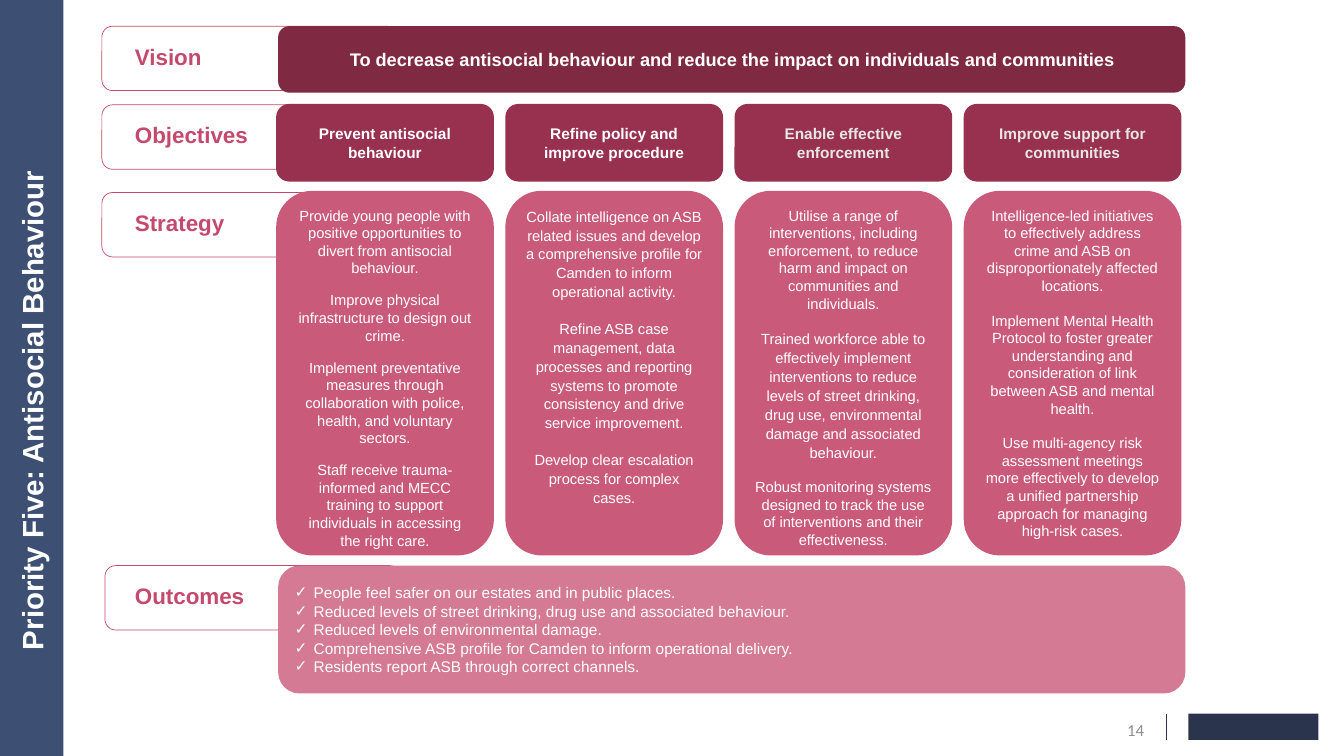
from collections import namedtuple

from lxml.etree import SubElement
from pptx import Presentation
from pptx.dml.color import RGBColor
from pptx.enum.shapes import MSO_CONNECTOR, MSO_SHAPE
from pptx.enum.text import MSO_ANCHOR, MSO_AUTO_SIZE, PP_ALIGN
from pptx.oxml.ns import qn
from pptx.util import Pt

NAVY = RGBColor(0x3D, 0x50, 0x73)
DARK_NAVY = RGBColor(0x2A, 0x35, 0x4D)
WINE = RGBColor(0x7F, 0x29, 0x42)
BERRY = RGBColor(0x98, 0x31, 0x50)
ROSE = RGBColor(0xCA, 0x5A, 0x7A)
PINK = RGBColor(0xD4, 0x7A, 0x94)
LABEL_PINK = RGBColor(0xC4, 0x49, 0x6D)
WHITE = RGBColor(0xFF, 0xFF, 0xFF)
PALE_GREY = RGBColor(0xE7, 0xE6, 0xE6)
NUMBER_GREY = RGBColor(0x91, 0x8C, 0x8A)

Box = namedtuple("Box", "left top width height")
Column = namedtuple("Column", "objective color strategies gap spacings")

COLUMN_PITCH = 163.7
COLUMN_WIDTH = 155.5
CORNER_INSET = 4.5
BULLET_INDENT = 13.7

COLUMNS = [
    Column("Prevent antisocial behaviour", WHITE, [
        "Provide young people with positive opportunities to divert from antisocial behaviour.",
        "Improve physical infrastructure to design out crime.",
        "Implement preventative measures through collaboration with police, health, and voluntary sectors.",
        "Staff receive trauma-informed and MECC training to support individuals in accessing the right care.",
    ], 10.3, [1, 1, 1, 1]),
    Column("Refine policy and improve procedure", WHITE, [
        "Collate intelligence on ASB related issues and develop a comprehensive profile for Camden to inform operational activity.",
        "Refine ASB case management, data processes and reporting systems to promote consistency and drive service improvement.",
        "Develop clear escalation process for complex cases.",
    ], 12.9, [1.07, 1.07, 1.07]),
    Column("Enable effective enforcement", PALE_GREY, [
        "Utilise a range of interventions, including enforcement, to reduce harm and impact on communities and individuals.",
        "Trained workforce able to effectively implement interventions to reduce levels of street drinking, drug use, environmental damage and associated behaviour.",
        "Robust monitoring systems designed to track the use of interventions and their effectiveness.",
    ], 12.1, [1, 1.07, 1]),
    Column("Improve support for communities", PALE_GREY, [
        "Intelligence-led initiatives to effectively address crime and ASB on disproportionately affected locations.",
        "Implement Mental Health Protocol to foster greater understanding and consideration of link between ASB and mental health.",
        "Use multi-agency risk assessment meetings more effectively to develop a unified partnership approach for managing high-risk cases.",
    ], 12.1, [1, 1, 1]),
]

OUTCOMES = [
    "People feel safer on our estates and in public places.",
    "Reduced levels of street drinking, drug use and associated behaviour.",
    "Reduced levels of environmental damage.",
    "Comprehensive ASB profile for Camden to inform operational delivery.",
    "Residents report ASB through correct channels.",
]


def in_points(box):
    """Return the four lengths of a box as Pt values."""
    return [Pt(length) for length in box]


def write_text(shape, texts, size, color, font="Arial", bold=False, align=PP_ALIGN.CENTER,
               anchor=MSO_ANCHOR.MIDDLE, gap=0, spacings=None, bullet=None):
    """Fill a shape with formatted paragraphs."""
    frame = shape.text_frame
    frame.word_wrap = True
    frame.auto_size = MSO_AUTO_SIZE.NONE
    frame.vertical_anchor = anchor
    for index, text in enumerate(texts):
        paragraph = frame.paragraphs[0] if index == 0 else frame.add_paragraph()
        paragraph.alignment = align
        paragraph.line_spacing = float(spacings[index]) if spacings else 1.0
        paragraph.space_before = Pt(gap if index else 0)
        paragraph.space_after = Pt(0)
        run = paragraph.add_run()
        run.text = text
        run.font.name = font
        run.font.size = Pt(size)
        run.font.bold = bold
        run.font.color.rgb = color
        if bullet:
            add_bullet(paragraph, bullet)


def add_bullet(paragraph, character):
    """Give a paragraph a hanging bullet."""
    properties = paragraph._p.get_or_add_pPr()
    properties.set("marL", str(Pt(BULLET_INDENT)))
    properties.set("indent", str(-Pt(BULLET_INDENT)))
    SubElement(properties, qn("a:buFont"), typeface="Arial")
    SubElement(properties, qn("a:buChar"), char=character)


def add_panel(slide, box, fill=None, outline=None, kind=MSO_SHAPE.ROUNDED_RECTANGLE):
    """Add a flat panel with an optional fill and outline."""
    shape = slide.shapes.add_shape(kind, *in_points(box))
    shape.shadow.inherit = False
    if fill is None:
        shape.fill.background()
    else:
        shape.fill.solid()
        shape.fill.fore_color.rgb = fill
    if outline is None:
        shape.line.fill.background()
    else:
        shape.line.color.rgb = outline
        shape.line.width = Pt(0.5)
    return shape


def place_in_front(placeholder, box):
    """Move a placeholder to a box above the shapes drawn so far."""
    placeholder.left, placeholder.top, placeholder.width, placeholder.height = in_points(box)
    placeholder.element.getparent().append(placeholder.element)


def add_sidebar(slide, box):
    """Draw the side band with the slide title running upwards."""
    add_panel(slide, box, NAVY, kind=MSO_SHAPE.RECTANGLE)
    title = slide.shapes.title
    length, thickness = 381, 34
    center_x, center_y = box.left + 23.4, box.top + 281
    place_in_front(title, Box(center_x - length / 2, center_y - thickness / 2, length, thickness))
    title.rotation = 270
    write_text(title, ["Priority Five: Antisocial Behaviour"], 21, WHITE, bold=True,
               align=PP_ALIGN.LEFT, anchor=MSO_ANCHOR.TOP)


def add_label(slide, box, text):
    """Draw an outlined row label."""
    add_panel(slide, box, outline=LABEL_PINK)
    label = slide.shapes.add_textbox(*in_points(Box(89.3, box.top + 10.4, 115, 24.5)))
    write_text(label, [text], 16, LABEL_PINK, bold=True, align=PP_ALIGN.LEFT,
               anchor=MSO_ANCHOR.TOP, spacings=[0.9])


def add_vision(slide, box):
    """Draw the vision banner."""
    banner = add_panel(slide, box, WINE)
    write_text(banner, ["To decrease antisocial behaviour and reduce the impact on individuals and communities"],
               13, WHITE, bold=True)


def add_column(slide, box, column):
    """Draw one objective above its strategies."""
    objective = add_panel(slide, box._replace(height=55.4), BERRY)
    write_text(objective, [column.objective], 11, column.color, bold=True)
    strategy_offset = 62
    strategy = add_panel(slide, box._replace(top=box.top + strategy_offset,
                                             height=box.height - strategy_offset), ROSE)
    write_text(strategy, column.strategies, 10.5, WHITE, anchor=MSO_ANCHOR.TOP,
               gap=column.gap, spacings=column.spacings)


def add_outcomes(slide, box):
    """Draw the outcomes panel with its ticked list."""
    add_panel(slide, box, PINK)
    body = slide.placeholders[1]
    place_in_front(body, Box(box.left + CORNER_INSET, box.top + CORNER_INSET,
                             box.width - 2 * CORNER_INSET, box.height - 2 * CORNER_INSET))
    write_text(body, OUTCOMES, 11, WHITE, align=PP_ALIGN.LEFT, bullet="✓")


def add_footer(slide, box):
    """Draw the slide number, the divider and a plain block."""
    number = slide.shapes.add_textbox(*in_points(Box(box.left, box.top - 3, 54.7, 28.8)))
    write_text(number, ["14"], 12, NUMBER_GREY, font="Calibri", align=PP_ALIGN.RIGHT)
    divider_x = box.left + 63.3
    divider = slide.shapes.add_connector(MSO_CONNECTOR.STRAIGHT, Pt(divider_x), Pt(box.top),
                                         Pt(divider_x), Pt(box.top + box.height))
    divider.line.color.rgb = DARK_NAVY
    divider.line.width = Pt(0.5)
    SubElement(divider.element.spPr, qn("a:effectLst"))
    block_offset = 79.2
    add_panel(slide, box._replace(left=box.left + block_offset, width=box.width - block_offset),
              DARK_NAVY, kind=MSO_SHAPE.RECTANGLE)


def main():
    """Build and save the slide."""
    presentation = Presentation()
    presentation.slide_width, presentation.slide_height = Pt(960), Pt(540)
    slide = presentation.slides.add_slide(presentation.slide_layouts[1])
    add_sidebar(slide, Box(0, 0, 45.4, 540))
    labels = [("Vision", 72.8, 18.7), ("Objectives", 72.8, 74.9),
              ("Strategy", 72.8, 137.5), ("Outcomes", 75, 404)]
    for text, left, top in labels:
        add_label(slide, Box(left, top, 211, 46), text)
    add_vision(slide, Box(198.7, 18.7, 648, 47.5))
    for index, column in enumerate(COLUMNS):
        add_column(slide, Box(197.3 + index * COLUMN_PITCH, 74.3, COLUMN_WIDTH, 322.5), column)
    add_outcomes(slide, Box(198.7, 404, 648, 91.4))
    add_footer(slide, Box(769.7, 509.8, 172, 18.7))
    presentation.save("out.pptx")


if __name__ == "__main__":
    main()
